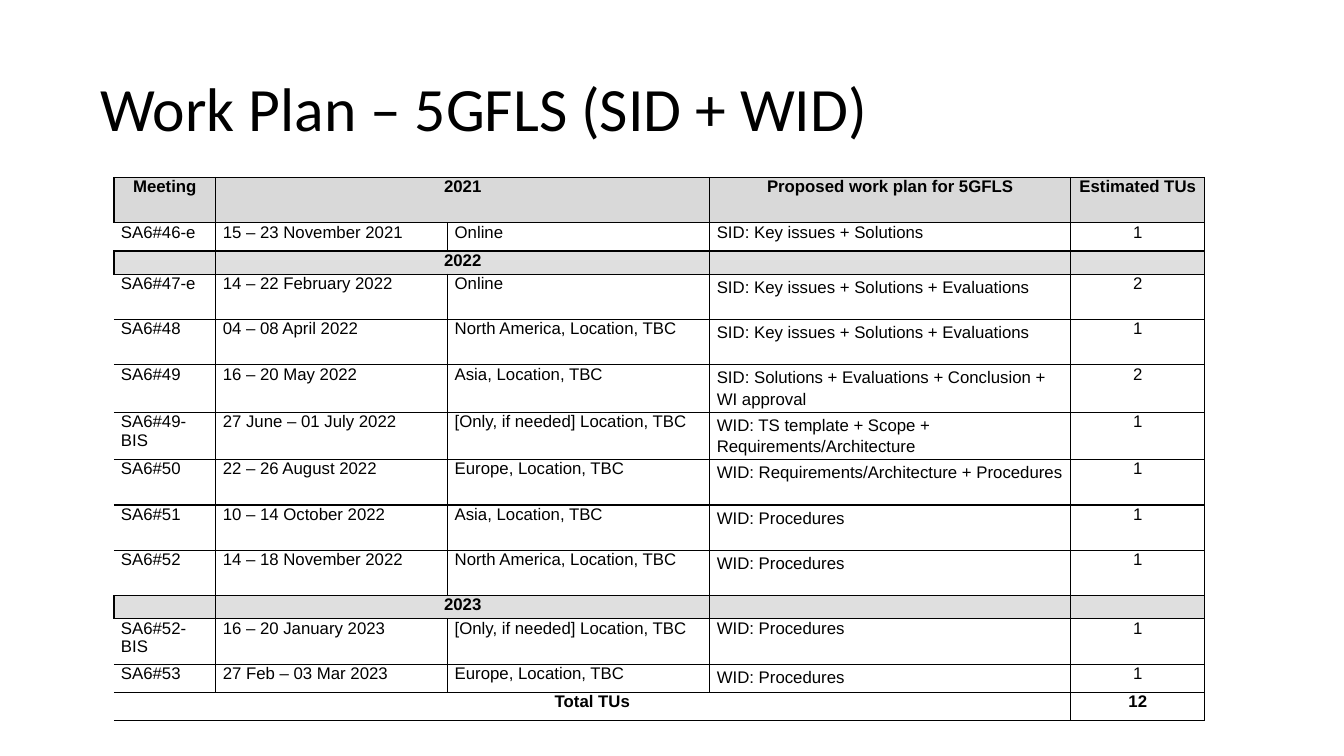
from dataclasses import dataclass

from lxml.etree import SubElement
from pptx import Presentation
from pptx.dml.color import RGBColor
from pptx.enum.text import MSO_ANCHOR, PP_ALIGN
from pptx.oxml.ns import qn
from pptx.util import Inches, Pt


@dataclass(frozen=True)
class Theme:
    black: str = "000000"
    white: str = "FFFFFF"
    header: str = "D9D9D9"
    year: str = "DFDFDF"
    title_font: str = "Calibri"
    table_font: str = "Arial"
    title_size: int = 44
    table_size: int = 12
    border_width: int = 1


THEME = Theme()
COLUMN_WIDTHS = [1.01, 2.3, 2.6, 3.58, 1.33]
LOOSE, LINE_SPACING = 0.01, 1.15
TALL, LOW, BAND = 0.45, 0.28, 0.23

ROWS = [
    ("header", TALL, ["Meeting", "2021", "", "Proposed work plan for 5GFLS", "Estimated TUs"]),
    ("meeting", LOW, ["SA6#46-e", "15 – 23 November 2021", "Online", "SID: Key issues + Solutions", "1"]),
    ("year", BAND, ["", "2022", "", "", ""]),
    ("loose", TALL, ["SA6#47-e", "14 – 22 February 2022", "Online",
                     "SID: Key issues + Solutions + Evaluations", "2"]),
    ("loose", TALL, ["SA6#48", "04 – 08 April 2022", "North America, Location, TBC",
                     "SID: Key issues + Solutions + Evaluations", "1"]),
    ("loose", TALL, ["SA6#49", "16 – 20 May 2022", "Asia, Location, TBC",
                     "SID: Solutions + Evaluations + Conclusion + WI approval", "2"]),
    ("loose", TALL, ["SA6#49-BIS", "27 June – 01 July 2022", "[Only, if needed] Location, TBC",
                     "WID: TS template + Scope + Requirements/Architecture", "1"]),
    ("loose", TALL, ["SA6#50", "22 – 26 August 2022", "Europe, Location, TBC",
                     "WID: Requirements/Architecture + Procedures", "1"]),
    ("loose", TALL, ["SA6#51", "10 – 14 October 2022", "Asia, Location, TBC", "WID: Procedures", "1"]),
    ("loose", TALL, ["SA6#52", "14 – 18 November 2022", "North America, Location, TBC",
                     "WID: Procedures", "1"]),
    ("year", BAND, ["", "2023", "", "", ""]),
    ("meeting", TALL, ["SA6#52-BIS", "16 – 20 January 2023", "[Only, if needed] Location, TBC",
                       "WID: Procedures", "1"]),
    ("loose", LOW, ["SA6#53", "27 Feb – 03 Mar 2023", "Europe, Location, TBC", "WID: Procedures", "1"]),
    ("total", LOW, ["Total TUs", "", "", "", "12"]),
]
FILLS = {"header": THEME.header, "year": THEME.year}
SPANS = {"header": (1, 2), "year": (1, 2), "total": (0, 3)}


def apply(target, values):
    for name, value in values.items():
        setattr(target, name, value)


def write(paragraph, text, font, size, bold=False):
    run = paragraph.add_run()
    run.text = text
    apply(run.font, {"name": font, "size": Pt(size), "bold": bold})
    run.font.color.rgb = RGBColor.from_string(THEME.black)


def add_title(slide, text):
    shape = slide.shapes.add_textbox(Inches(0.9), Inches(0.38), Inches(11.5), Inches(1.45))
    apply(shape.text_frame, {"word_wrap": True, "vertical_anchor": MSO_ANCHOR.MIDDLE})
    paragraph = shape.text_frame.paragraphs[0]
    paragraph.line_spacing = 0.9
    write(paragraph, text, THEME.title_font, THEME.title_size)


def set_borders(cell, open_left):
    properties = cell._tc.get_or_add_tcPr()
    for side in ("lnL", "lnR", "lnT", "lnB"):
        line = SubElement(properties, qn(f"a:{side}"), w=str(Pt(THEME.border_width)))
        if side == "lnL" and open_left:
            SubElement(line, qn("a:noFill"))
        else:
            fill = SubElement(line, qn("a:solidFill"))
            SubElement(fill, qn("a:srgbClr"), val=THEME.black)


def format_cell(cell, text, kind, column):
    shaded = kind in FILLS
    loose = kind == "loose" and column == 3
    centred = kind in SPANS or column == 4
    apply(cell, {
        "margin_left": Inches(0.07), "margin_right": Inches(0.07),
        "margin_top": Inches(LOOSE if loose else 0), "margin_bottom": Inches(0),
        "vertical_anchor": MSO_ANCHOR.TOP,
    })
    set_borders(cell, open_left=column == 0 and not shaded)
    cell.fill.solid()
    cell.fill.fore_color.rgb = RGBColor.from_string(FILLS.get(kind, THEME.white))
    paragraph = cell.text_frame.paragraphs[0]
    apply(paragraph, {
        "alignment": PP_ALIGN.CENTER if centred else PP_ALIGN.LEFT,
        "space_before": Pt(1), "space_after": Pt(1),
        "line_spacing": LINE_SPACING if loose else 1.0,
    })
    if text:
        write(paragraph, text, THEME.table_font, THEME.table_size, kind in SPANS)
    else:
        SubElement(paragraph._p, qn("a:endParaRPr"), sz=str(THEME.table_size * 100))


def add_work_plan(slide):
    height = sum(row_height for _, row_height, _ in ROWS)
    frame = slide.shapes.add_table(len(ROWS), len(COLUMN_WIDTHS), Inches(1.13), Inches(1.76),
                                   Inches(sum(COLUMN_WIDTHS)), Inches(height))
    table = frame.table
    apply(table, {"first_row": False, "horz_banding": False})
    for column, width in zip(table.columns, COLUMN_WIDTHS):
        column.width = Inches(width)
    for index, (kind, row_height, texts) in enumerate(ROWS):
        table.rows[index].height = Inches(row_height)
        for column, text in enumerate(texts):
            format_cell(table.cell(index, column), text, kind, column)
        if kind in SPANS:
            first, last = SPANS[kind]
            table.cell(index, first).merge(table.cell(index, last))


def main():
    presentation = Presentation()
    apply(presentation, {"slide_width": Inches(13.33), "slide_height": Inches(7.5)})
    slide = presentation.slides.add_slide(presentation.slide_layouts[6])
    add_title(slide, "Work Plan – 5GFLS (SID + WID)")
    add_work_plan(slide)
    presentation.save("out.pptx")


if __name__ == "__main__":
    main()
